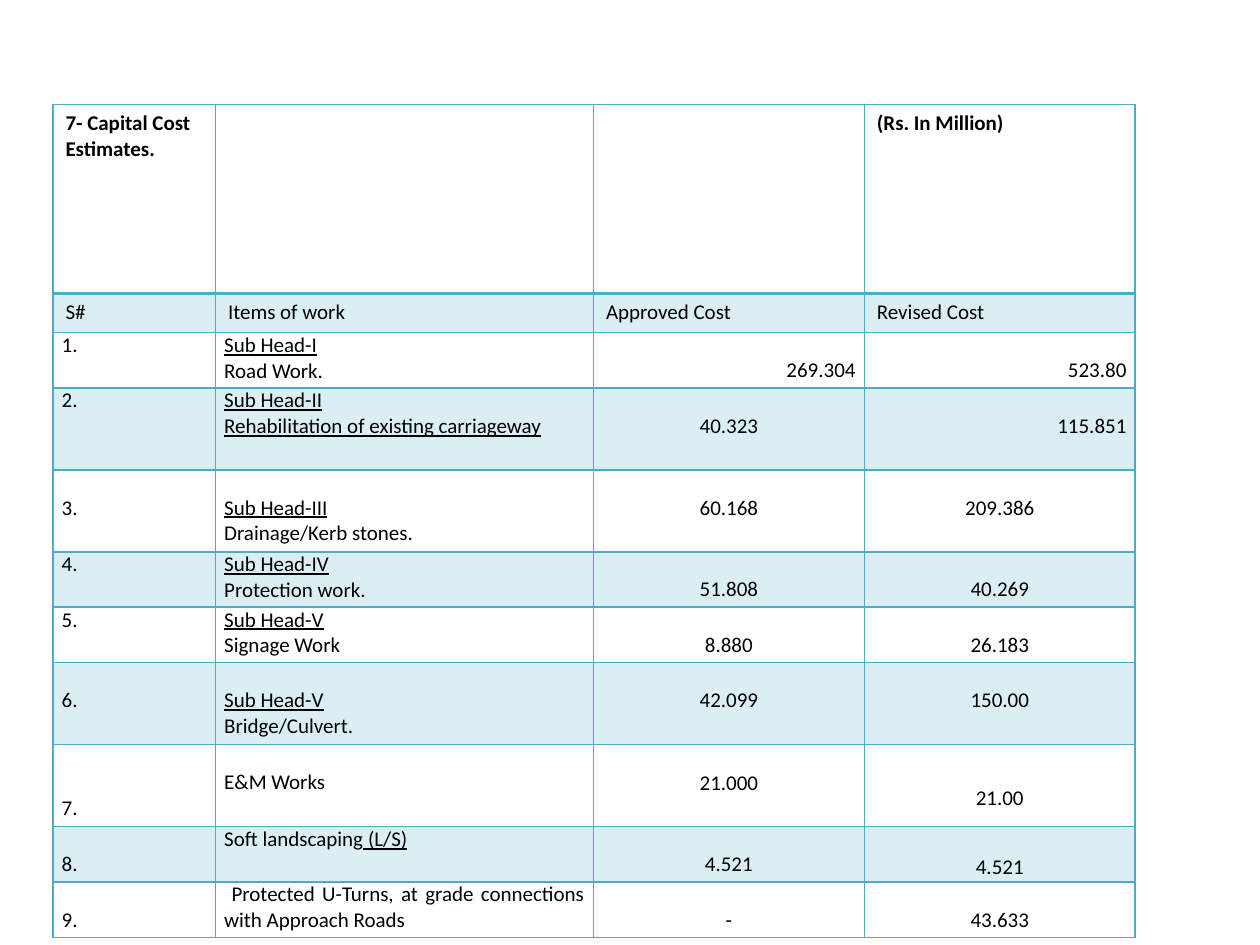
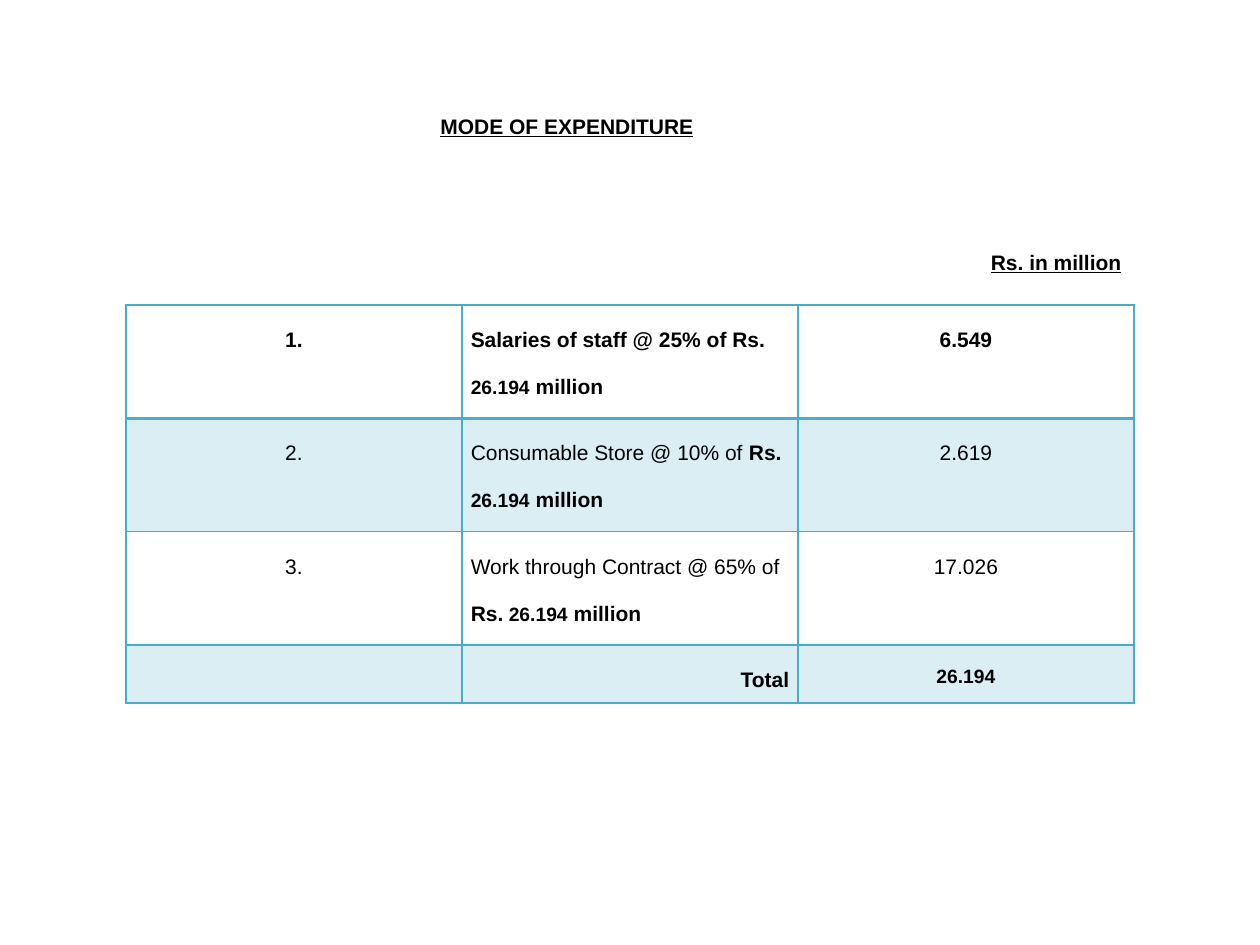
from lxml import etree
from pptx import Presentation
from pptx.dml.color import RGBColor
from pptx.enum.text import MSO_ANCHOR, MSO_AUTO_SIZE, PP_ALIGN
from pptx.oxml.ns import qn
from pptx.util import Inches, Pt

LEFT, CENTER, RIGHT = PP_ALIGN.LEFT, PP_ALIGN.CENTER, PP_ALIGN.RIGHT
JUSTIFY = PP_ALIGN.JUSTIFY
TOP, MIDDLE = MSO_ANCHOR.TOP, MSO_ANCHOR.MIDDLE

BLACK = RGBColor(0x00, 0x00, 0x00)
TEAL = RGBColor(0x4B, 0xAC, 0xC6)
PALE_TEAL = RGBColor(0xDB, 0xEE, 0xF4)

TITLE_ONLY, BLANK = 5, 6
LINE_HEIGHT = 0.2
PLAIN = {}
BOLD = {"bold": True}
UNDERLINE = {"underline": True}
HEADING = {"bold": True, "underline": True}
BOLD_SMALL = {"bold": True, "size": Pt(11)}

# Lines of spans, lead above number and item, approved cost, revised cost, height
WORK_ITEMS = [
    ([[("Sub Head-I", UNDERLINE)], [("Road Work.", PLAIN)]], 0, "269.304", "523.80", 0.44),
    ([[("Sub Head-II", UNDERLINE)], [("Rehabilitation of existing carriageway", UNDERLINE)]],
     0, "40.323", "115.851", 0.65),
    ([[("Sub Head-III", UNDERLINE)], [("Drainage/Kerb stones.", PLAIN)]],
     LINE_HEIGHT, "60.168", "209.386", 0.65),
    ([[("Sub Head-IV", UNDERLINE)], [("Protection work.", PLAIN)]], 0, "51.808", "40.269", 0.44),
    ([[("Sub Head-V", UNDERLINE)], [("Signage Work", PLAIN)]], 0, "8.880", "26.183", 0.44),
    ([[("Sub Head-V", UNDERLINE)], [("Bridge/Culvert.", PLAIN)]],
     LINE_HEIGHT, "42.099", "150.00", 0.65),
    ([[("E&M Works ", PLAIN)]], LINE_HEIGHT, "21.000", "21.00", 0.65),
    ([[("Soft landscaping", PLAIN), (" (L/S)", UNDERLINE)]], 0, "4.521", "4.521", 0.44),
    ([[(" Protected U-Turns, at grade connections with Approach Roads", PLAIN)]],
     0, "-", "43.633", 0.44),
]
FIRST_SPACED_ITEM = 7

# Purpose, its format, amount
EXPENDITURES = [
    ("Salaries of staff @ 25% of ", BOLD, "6.549"),
    ("Consumable Store @ 10% of ", PLAIN, "2.619"),
    ("Work through Contract @ 65% of ", PLAIN, "17.026"),
]


def set_values(target, values):
    for name, value in values.items():
        setattr(target, name, value)


def write_lines(frame, lines, font, align=LEFT, spacing=1):
    for index, spans in enumerate(lines):
        para = frame.add_paragraph() if index else frame.paragraphs[0]
        set_values(para, {"alignment": align, "line_spacing": spacing,
                          "space_before": Pt(0)})
        for text, values in spans:
            span = para.add_run()
            span.text = text
            span.font.color.rgb = BLACK
            set_values(span.font, {"name": font, "size": Pt(12), "bold": False,
                                   "underline": False, **values})


def write_heading(box, text, top, align):
    set_values(box, {"left": Inches(0), "top": Inches(top),
                     "width": Inches(9), "height": Inches(0.5)})
    set_values(box.text_frame, {"word_wrap": True, "vertical_anchor": MIDDLE,
                                "auto_size": MSO_AUTO_SIZE.NONE})
    write_lines(box.text_frame, [[(text, HEADING)]], "Arial", align)


def style_cell(cell, row):
    """Draw the borders, thicker under the first row, and shade every other row."""
    properties = cell._tc.get_or_add_tcPr()
    widths = {"lnL": 1, "lnR": 1, "lnT": 2 if row == 1 else 1, "lnB": 2 if row == 0 else 1}
    for side, width in widths.items():
        line = etree.SubElement(properties, qn("a:" + side), w=str(Pt(width)))
        fill = etree.SubElement(line, qn("a:solidFill"))
        etree.SubElement(fill, qn("a:srgbClr"), val=str(TEAL))
    if row % 2:
        cell.fill.solid()
        cell.fill.fore_color.rgb = PALE_TEAL
    else:
        cell.fill.background()


def add_grid(page, left, top, widths, heights):
    frame = page.shapes.add_table(len(heights), len(widths), Inches(left), Inches(top),
                                  Inches(sum(widths)), Inches(sum(heights)))
    table = frame.table
    set_values(table, {"first_row": False, "horz_banding": False})
    for column, width in zip(table.columns, widths):
        column.width = Inches(width)
    for index, (row, height) in enumerate(zip(table.rows, heights)):
        row.height = Inches(height)
        for cell in row.cells:
            style_cell(cell, index)
    return table


def fill_cell(cell, lines, font, align=LEFT, spacing=1, lead=0, anchor=TOP):
    set_values(cell, {"margin_left": Inches(0.07), "margin_right": Inches(0.07),
                      "margin_top": Inches(lead), "margin_bottom": Inches(0),
                      "vertical_anchor": anchor})
    write_lines(cell.text_frame, lines, font, align, spacing)


def add_cost_page(deck):
    page = deck.slides.add_slide(deck.slide_layouts[BLANK])
    heights = [1.5, 0.31] + [item[-1] for item in WORK_ITEMS]
    table = add_grid(page, 0.42, 0.83, [1.29, 3, 2.15, 2.15], heights)

    # Caption row and column names keep the default cell margins
    captions = ["7- Capital Cost Estimates.", "", "", "(Rs. In Million)"]
    names = ["S#", "Items of work", "Approved Cost", "Revised Cost"]
    for row, (texts, values) in enumerate([(captions, BOLD), (names, PLAIN)]):
        for column, text in enumerate(texts):
            if text:
                write_lines(table.cell(row, column).text_frame, [[(text, values)]], "Calibri")

    # Work items
    for number, (lines, lead, approved, revised, _) in enumerate(WORK_ITEMS, start=1):
        spaced = number >= FIRST_SPACED_ITEM
        spacing = 2 if spaced else 1
        cost_lead = 0 if spaced else LINE_HEIGHT
        cells = table.rows[number + 1].cells
        fill_cell(cells[0], [[(f"{number}.", PLAIN)]], "Calibri", LEFT, spacing, lead)
        fill_cell(cells[1], lines, "Calibri", JUSTIFY if spaced else LEFT, 1, lead)
        fill_cell(cells[2], [[(approved, PLAIN)]], "Calibri",
                  RIGHT if number == 1 else CENTER, spacing, cost_lead)
        fill_cell(cells[3], [[(revised, PLAIN)]], "Calibri",
                  RIGHT if number <= 2 else CENTER, spacing, cost_lead,
                  MIDDLE if number in (7, 8) else TOP)


def add_expenditure_page(deck):
    page = deck.slides.add_slide(deck.slide_layouts[TITLE_ONLY])
    write_heading(page.shapes.title, "MODE OF EXPENDITURE", 0.75, CENTER)
    unit_box = page.shapes.add_textbox(0, 0, 0, 0)
    write_heading(unit_box, "Rs. in million", 1.83, RIGHT)

    # Expenditure rows
    table = add_grid(page, 1, 2.42, [8 / 3] * 3, [0.9] * 3 + [0.46])
    base = [("Rs.", BOLD), (" 26.194", BOLD_SMALL), (" million", BOLD)]
    for row, (purpose, values, amount) in enumerate(EXPENDITURES):
        cells = table.rows[row].cells
        fill_cell(cells[0], [[(f"{row + 1}.", values)]], "Arial", CENTER, 2)
        fill_cell(cells[1], [[(purpose, values)] + base], "Arial", LEFT, 2)
        fill_cell(cells[2], [[(amount, values)]], "Arial", CENTER, 2)

    # Total row
    fill_cell(table.cell(3, 1), [[("Total", BOLD)]], "Arial", RIGHT, 2)
    fill_cell(table.cell(3, 2), [[("26.194", BOLD_SMALL)]], "Arial", CENTER, 2)


def main():
    deck = Presentation()
    set_values(deck, {"slide_width": Inches(10), "slide_height": Inches(7.5)})
    add_cost_page(deck)
    add_expenditure_page(deck)
    deck.save("out.pptx")


if __name__ == "__main__":
    main()
